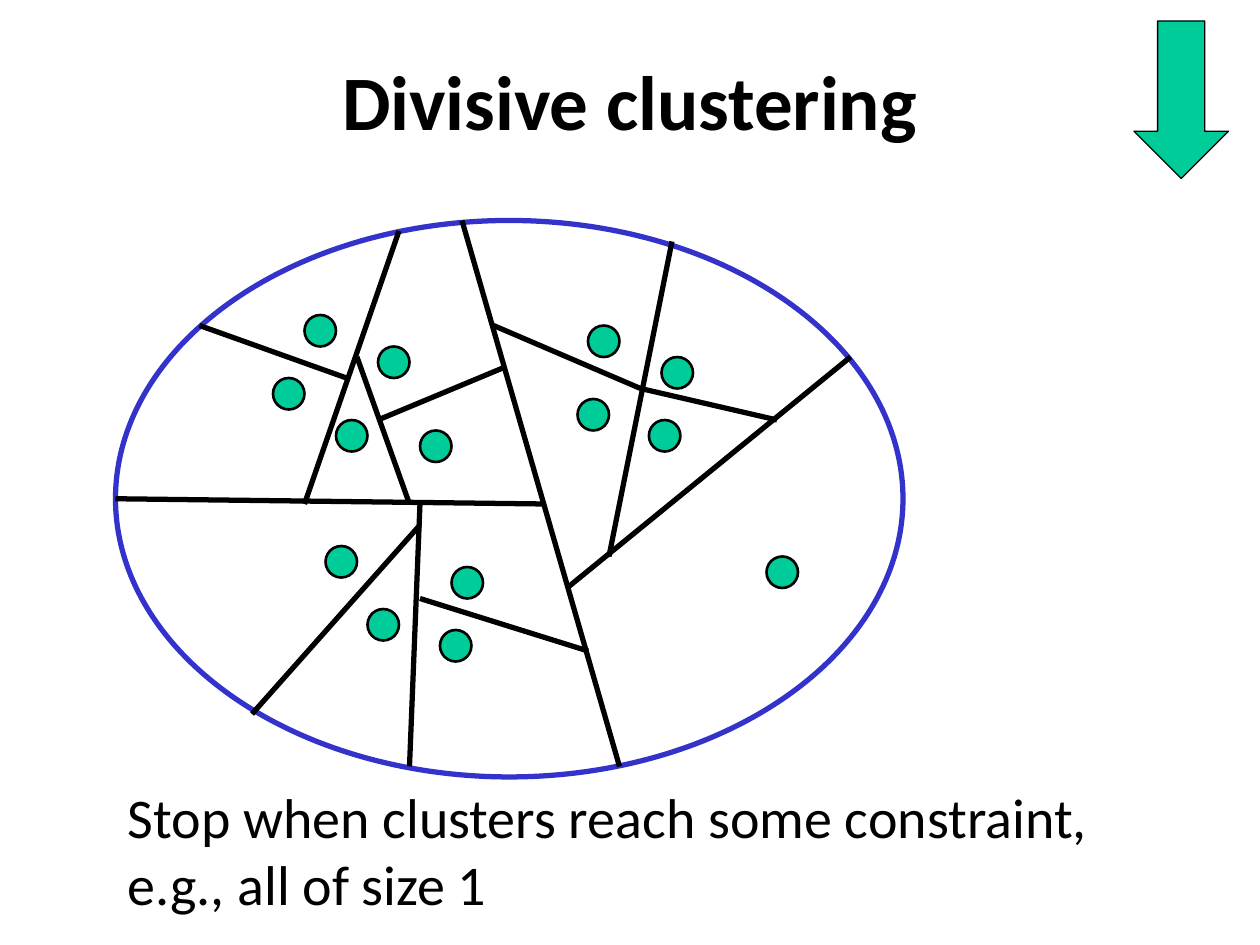
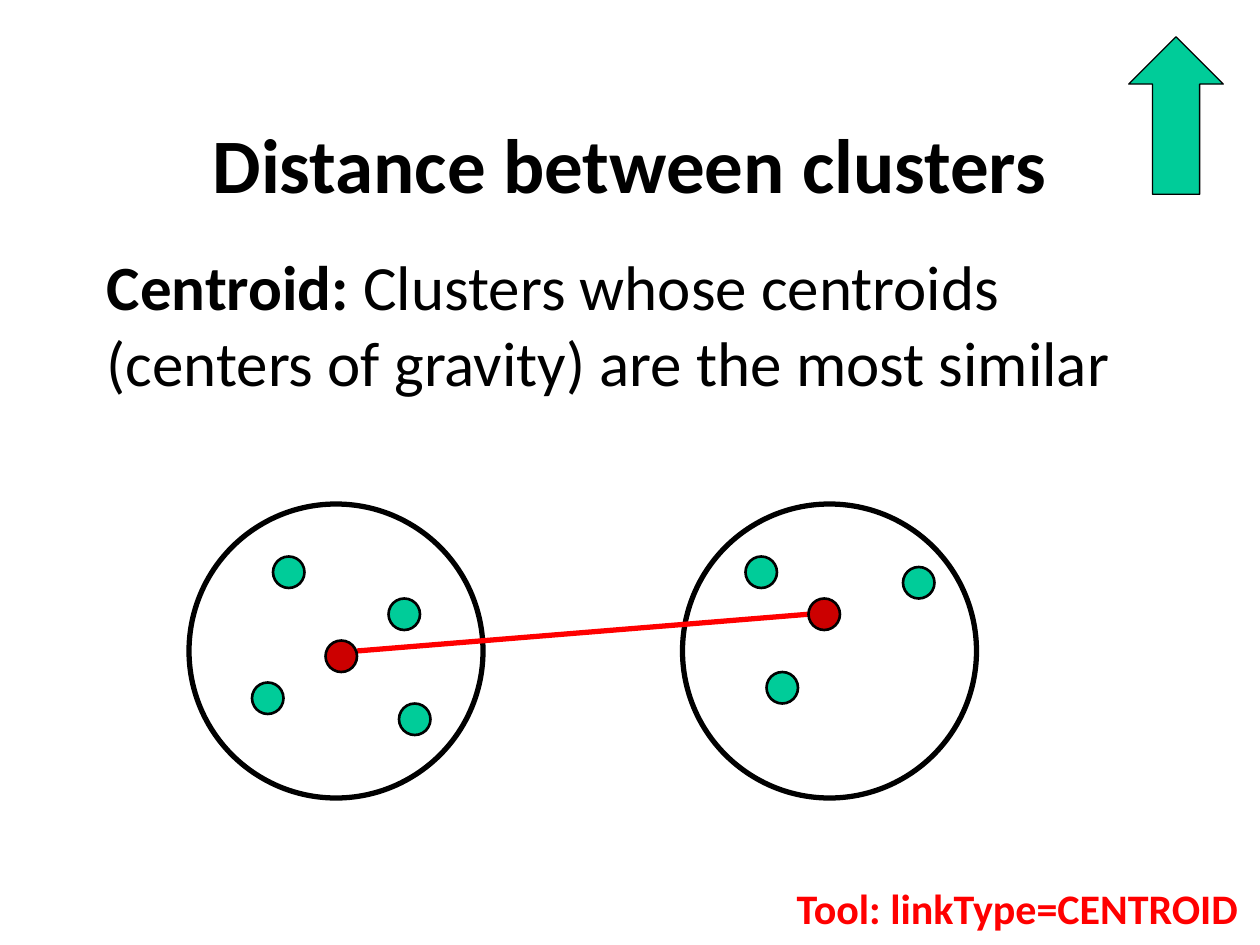
from pptx import Presentation
from pptx.dml.color import RGBColor
from pptx.enum.shapes import MSO_CONNECTOR, MSO_SHAPE as SHAPE
from pptx.enum.text import MSO_ANCHOR, PP_ALIGN as ALIGN
from pptx.oxml.ns import qn
from pptx.util import Pt
from lxml import etree

# Shared style; 120 px to the inch
PX = 7620
FONT = "Calibri"
BLACK = RGBColor(0x00, 0x00, 0x00)
GREEN = RGBColor(0x00, 0xCC, 0x99)
BLUE = RGBColor(0x33, 0x33, 0xCC)
RED = RGBColor(0xFF, 0x00, 0x00)
DARK_RED = RGBColor(0xCC, 0x00, 0x00)
DOT = 30
ARROW_SIZE = (90, 150)

# Slide 1: points, and the cuts that divide them
DIVISIVE_POINTS = [
    (290, 300), (260, 360), (320, 400), (360, 330), (400, 410),
    (550, 380), (560, 310), (630, 340), (618, 400), (730, 530),
    (350, 580), (310, 520), (430, 540), (419, 600),
]
DATA_SET = (110, 210, 750, 530)
CUTS = [
    (440, 210, 590, 730), (110, 475, 520, 480), (540, 560, 810, 340),
    (400, 480, 390, 730), (400, 500, 240, 680), (400, 570, 560, 620),
    (290, 480, 380, 220), (330, 360, 190, 310), (340, 340, 390, 480),
    (360, 400, 480, 350), (580, 530, 640, 230), (610, 370, 740, 400),
    (610, 370, 470, 310),
]
STOP_RULE = "Stop when clusters reach some constraint, e.g., all of size 1"

# Slide 2: two clusters and their centroids
CLUSTER_POINTS = [
    (260, 530), (240, 650), (380, 670), (370, 570),
    (730, 640), (710, 530), (860, 540),
]
CLUSTERS = [(180, 480, 280, 280), (650, 480, 280, 280)]
CENTROIDS = [(310, 610), (770, 570)]
CENTROID_LINK = (340, 620, 770, 585)
DEFINITION = [
    ("Centroid: ", True),
    ("Clusters whose centroids (centers of gravity) are the most similar", False),
]
LINK_TYPE = "Tool: linkType=CENTROID "


def emu(*lengths):
    return [n * PX for n in lengths]


def style(r, size, bold=False, color=BLACK):
    r.font.name, r.font.size, r.font.bold = FONT, Pt(size), bold
    r.font.color.rgb = color


def add_slide(prs, title, top):
    s = prs.slides.add_slide(prs.slide_layouts[5])
    sp = s.shapes.title
    sp.left, sp.top, sp.width, sp.height = emu(90, top, 1020, 150)
    tf = sp.text_frame
    tf.text = title
    tf.vertical_anchor = MSO_ANCHOR.MIDDLE
    p = tf.paragraphs[0]
    p.alignment = ALIGN.CENTER
    style(p.runs[0], 44, bold=True)
    return s


def add_shape(s, kind, box, fill=None, line=BLACK, weight=3):
    sp = s.shapes.add_shape(kind, *emu(*box))
    sp.shadow.inherit = False
    if fill is None:
        sp.fill.background()
    else:
        sp.fill.solid()
        sp.fill.fore_color.rgb = fill
    sp.line.color.rgb = line
    sp.line.width = Pt(weight)
    return sp


def add_dots(s, points, fill=GREEN):
    for x, y in points:
        add_shape(s, SHAPE.OVAL, (x, y, DOT, DOT), fill, weight=1.5)


def add_line(s, ends, color=BLACK):
    line = s.shapes.add_connector(MSO_CONNECTOR.STRAIGHT, *emu(*ends))
    line.line.color.rgb = color
    line.line.width = Pt(3)
    etree.SubElement(line._element.spPr, qn("a:effectLst"))


def add_arrow(s, x, y, rotation=0):
    sp = add_shape(s, SHAPE.DOWN_ARROW, (x, y, *ARROW_SIZE), GREEN, weight=0.75)
    sp.rotation = rotation


def add_text(s, box, parts, size, color=BLACK, align=ALIGN.LEFT):
    tf = s.shapes.add_textbox(*emu(*box)).text_frame
    tf.word_wrap = True
    p = tf.paragraphs[0]
    p.alignment = align
    for text, bold in parts:
        r = p.add_run()
        r.text = text
        style(r, size, bold, color)


def divisive_slide(prs):
    s = add_slide(prs, "Divisive clustering", 20)
    add_dots(s, DIVISIVE_POINTS)
    add_shape(s, SHAPE.OVAL, DATA_SET, line=BLUE)
    for cut in CUTS:
        add_line(s, cut)
    add_text(s, (110, 739, 950, 142), [(STOP_RULE, False)], 32)
    add_arrow(s, 1080, 20)


def distance_slide(prs):
    s = add_slide(prs, "Distance between clusters", 80)
    add_text(s, (90, 230, 1020, 160), DEFINITION, 36)
    add_dots(s, CLUSTER_POINTS)
    for cluster in CLUSTERS:
        add_shape(s, SHAPE.OVAL, cluster)
    add_line(s, CENTROID_LINK, RED)
    add_dots(s, CENTROIDS, DARK_RED)
    add_arrow(s, 1075, 35, rotation=180)
    add_text(s, (640, 835, 560, 60), [(LINK_TYPE, True)], 24, RED, ALIGN.RIGHT)


def main():
    prs = Presentation()
    prs.slide_width, prs.slide_height = emu(1200, 900)
    divisive_slide(prs)
    distance_slide(prs)
    prs.save("out.pptx")


if __name__ == "__main__":
    main()
